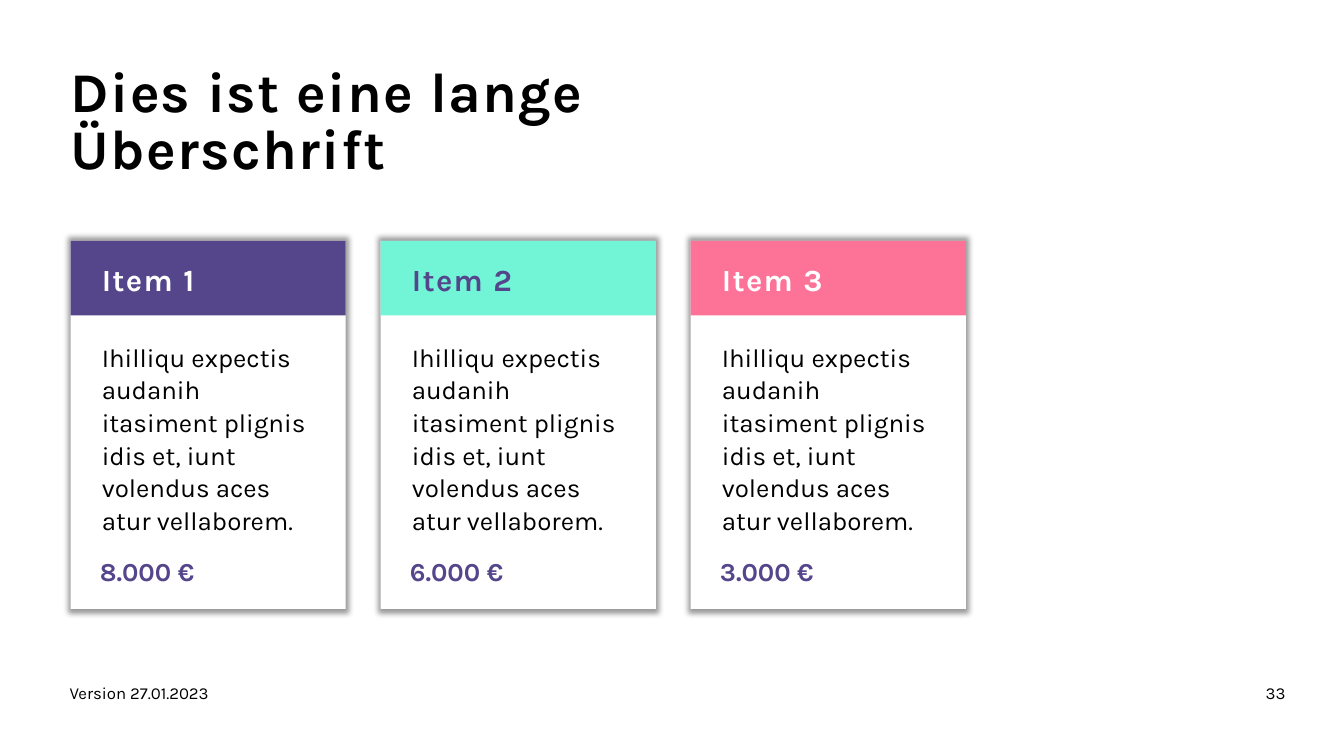
from lxml import etree
from pptx import Presentation
from pptx.dml.color import RGBColor
from pptx.enum import shapes, text
from pptx.oxml.ns import qn
from pptx.util import Inches, Pt

BLACK, WHITE, PURPLE, MINT, PINK = "000000", "FFFFFF", "55468C", "72F5D6", "FD7398"
CARD_WIDTH, CARD_TOP = 2.73, 2.39
BODY = ["Ihilliqu expectis audanih itasiment plignis idis et, iunt volendus aces",
        "atur vellaborem."]
ITEMS = [("Item 1", "8.000 €", PURPLE, WHITE),
         ("Item 2", "6.000 €", MINT, PURPLE),
         ("Item 3", "3.000 €", PINK, WHITE)]


def write(sp, lines, size, color=BLACK, bold=False, spacing=0, line_spacing=1.0,
          align=text.PP_ALIGN.LEFT, anchor=text.MSO_ANCHOR.TOP, insets=(0, 0, 0, 0)):
    """Fill a shape with paragraphs; insets are left, top, right, bottom in inches."""
    tf = sp.text_frame
    frame_format = {"word_wrap": True, "auto_size": text.MSO_AUTO_SIZE.NONE,
                    "vertical_anchor": anchor}
    for side, inset in zip(("left", "top", "right", "bottom"), insets):
        frame_format["margin_" + side] = Inches(inset)
    for name, value in frame_format.items():
        setattr(tf, name, value)
    for i, line in enumerate(lines):
        p = tf.paragraphs[0] if i == 0 else tf.add_paragraph()
        p.alignment, p.line_spacing = align, line_spacing
        p.space_before = Pt(0)
        r = p.add_run()
        r.text = line
        for name, value in {"name": "Karla", "size": Pt(size), "bold": bold}.items():
            setattr(r.font, name, value)
        r.font.color.rgb = RGBColor.from_string(color)
        if spacing:
            r.font._element.set("spc", str(spacing * 100))


def add_panel(s, left, height, color):
    sp = s.shapes.add_shape(shapes.MSO_SHAPE.RECTANGLE, Inches(left), Inches(CARD_TOP),
                            Inches(CARD_WIDTH), Inches(height))
    sp.shadow.inherit = False
    sp.fill.solid()
    sp.fill.fore_color.rgb = RGBColor.from_string(color)
    sp.line.fill.background()
    return sp


prs = Presentation()
prs.slide_width, prs.slide_height = Inches(13.33), Inches(7.5)
s = prs.slides.add_slide(prs.slide_layouts[5])

title = s.shapes.title
title.left, title.top = Inches(0.7), Inches(0.66)
title.width, title.height = Inches(8.2), Inches(1.12)
write(title, ["Dies ist eine lange Überschrift"], 40, bold=True, spacing=1,
      line_spacing=0.85)

for i, (name, price, color, name_color) in enumerate(ITEMS):
    left = 0.7 + i * 6.15 / 2
    card = add_panel(s, left, 3.65, WHITE)
    effects = card._element.spPr.find(qn("a:effectLst"))
    shadow = etree.SubElement(effects, qn("a:outerShdw"), blurRad=str(Pt(4)), sx="102000",
                              sy="102000", algn="ctr", rotWithShape="0")
    shade = etree.SubElement(shadow, qn("a:srgbClr"), val=BLACK)
    etree.SubElement(shade, qn("a:alpha"), val="40000")
    write(card, BODY, 18.5, line_spacing=1.05, insets=(0.31, 0.98, 0.28, 0.1))

    header = add_panel(s, left, 0.74, color)
    write(header, [name], 22, name_color, bold=True, spacing=1, line_spacing=1.05,
          anchor=text.MSO_ANCHOR.MIDDLE, insets=(0.31, 0.12, 0.12, 0.12))

    price_box = s.shapes.add_textbox(Inches(left + 0.29), Inches(5.5),
                                     Inches(2.21), Inches(0.26))
    write(price_box, [price], 18.5, PURPLE, bold=True, line_spacing=1.05)

for label, left, width, align in [
        ("Version 27.01.2023", 0.69, 8.23, text.PP_ALIGN.LEFT),
        ("33", 10.6, 2.15, text.PP_ALIGN.RIGHT)]:
    footer = s.shapes.add_textbox(Inches(left), Inches(6.77), Inches(width), Inches(0.4))
    write(footer, [label], 12, align=align)

prs.save("out.pptx")
